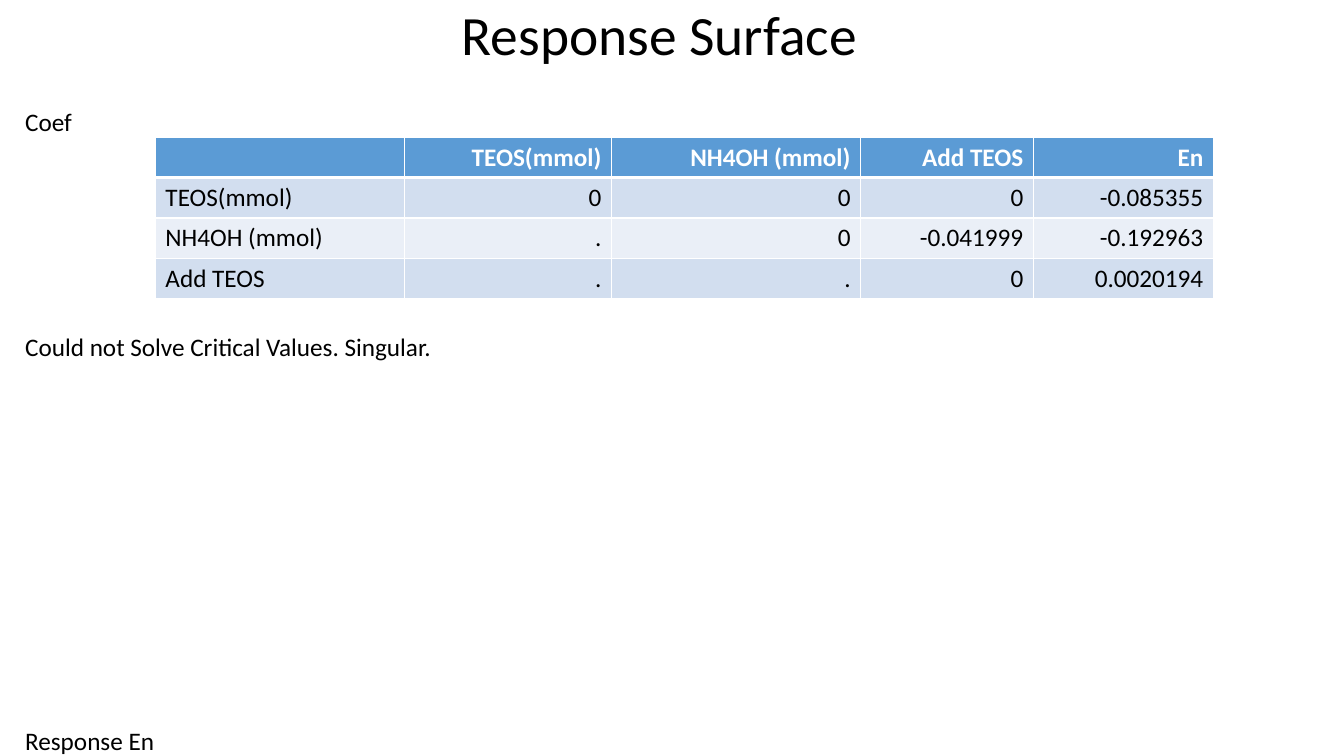
from lxml import etree
from pptx import Presentation
from pptx.dml.color import RGBColor
from pptx.enum import text
from pptx.oxml import ns
from pptx.util import Pt

COLORS = {"ink": "000000", "white": "FFFFFF", "header": "5B9BD5",
          "band_dark": "D2DEEF", "band_light": "EAEFF7"}


def style(paragraph, size, color="ink", bold=False, align=text.PP_ALIGN.LEFT):
    paragraph.alignment = align
    paragraph.font.name = "Calibri"
    paragraph.font.size = Pt(size)
    paragraph.font.bold = bold
    paragraph.font.color.rgb = RGBColor.from_string(COLORS[color])


def add_border(cell, side, width):
    line = etree.SubElement(cell._tc.get_or_add_tcPr(), ns.qn(f"a:ln{side}"), w=str(Pt(width)))
    fill = etree.SubElement(line, ns.qn("a:solidFill"))
    etree.SubElement(fill, ns.qn("a:srgbClr"), val=COLORS["white"])


presentation = Presentation()
presentation.slide_width, presentation.slide_height = Pt(960), Pt(540)
slide = presentation.slides.add_slide(presentation.slide_layouts[6])

# Title
title = slide.shapes.add_textbox(Pt(0), Pt(0), Pt(942), Pt(54))
title.text_frame.word_wrap = True
title.text_frame.vertical_anchor = text.MSO_ANCHOR.MIDDLE
heading = title.text_frame.paragraphs[0]
heading.text = "Response Surface"
heading.line_spacing = 0.9
style(heading, 39.6, align=text.PP_ALIGN.CENTER)

# Labels down the left edge, each wide enough for one line
labels = [("Coef", 76, 36), ("Could not Solve Critical Values. Singular.", 237, 298),
          ("Response En", 518, 97)]
for wording, top, width in labels:
    label = slide.shapes.add_textbox(Pt(18), Pt(top), Pt(width), Pt(22))
    frame = label.text_frame
    frame.margin_left = frame.margin_right = frame.margin_top = frame.margin_bottom = 0
    frame.word_wrap = False
    frame.auto_size = text.MSO_AUTO_SIZE.SHAPE_TO_FIT_TEXT
    frame.text = wording
    style(frame.paragraphs[0], 18)

# Coefficient table
coefficients = [
    ["", "TEOS(mmol)", "NH4OH (mmol)", "Add TEOS", "En"],
    ["TEOS(mmol)", "0", "0", "0", "-0.085355"],
    ["NH4OH (mmol)", ".", "0", "-0.041999", "-0.192963"],
    ["Add TEOS", ".", ".", "0", "0.0020194"],
]
column_widths = [178, 147.8, 178, 123.4, 128.6]
row_height = 28.8
table = slide.shapes.add_table(
    len(coefficients), len(column_widths), Pt(111), Pt(98),
    Pt(sum(column_widths)), Pt(row_height * len(coefficients))).table
for column, width in zip(table.columns, column_widths):
    column.width = Pt(width)

for row_index, values in enumerate(coefficients):
    is_header = row_index == 0
    band = "header" if is_header else "band_dark" if row_index % 2 else "band_light"
    for column_index, value in enumerate(values):
        cell = table.cell(row_index, column_index)
        # The rule between header and body is heavier
        for side in "LRTB":
            heavy = (row_index, side) in [(0, "B"), (1, "T")]
            add_border(cell, side, 3 if heavy else 1)
        cell.fill.solid()
        cell.fill.fore_color.rgb = RGBColor.from_string(COLORS[band])
        cell.text = value
        style(cell.text_frame.paragraphs[0], 18, "white" if is_header else "ink", is_header,
              text.PP_ALIGN.RIGHT if column_index else text.PP_ALIGN.LEFT)

presentation.save("out.pptx")
